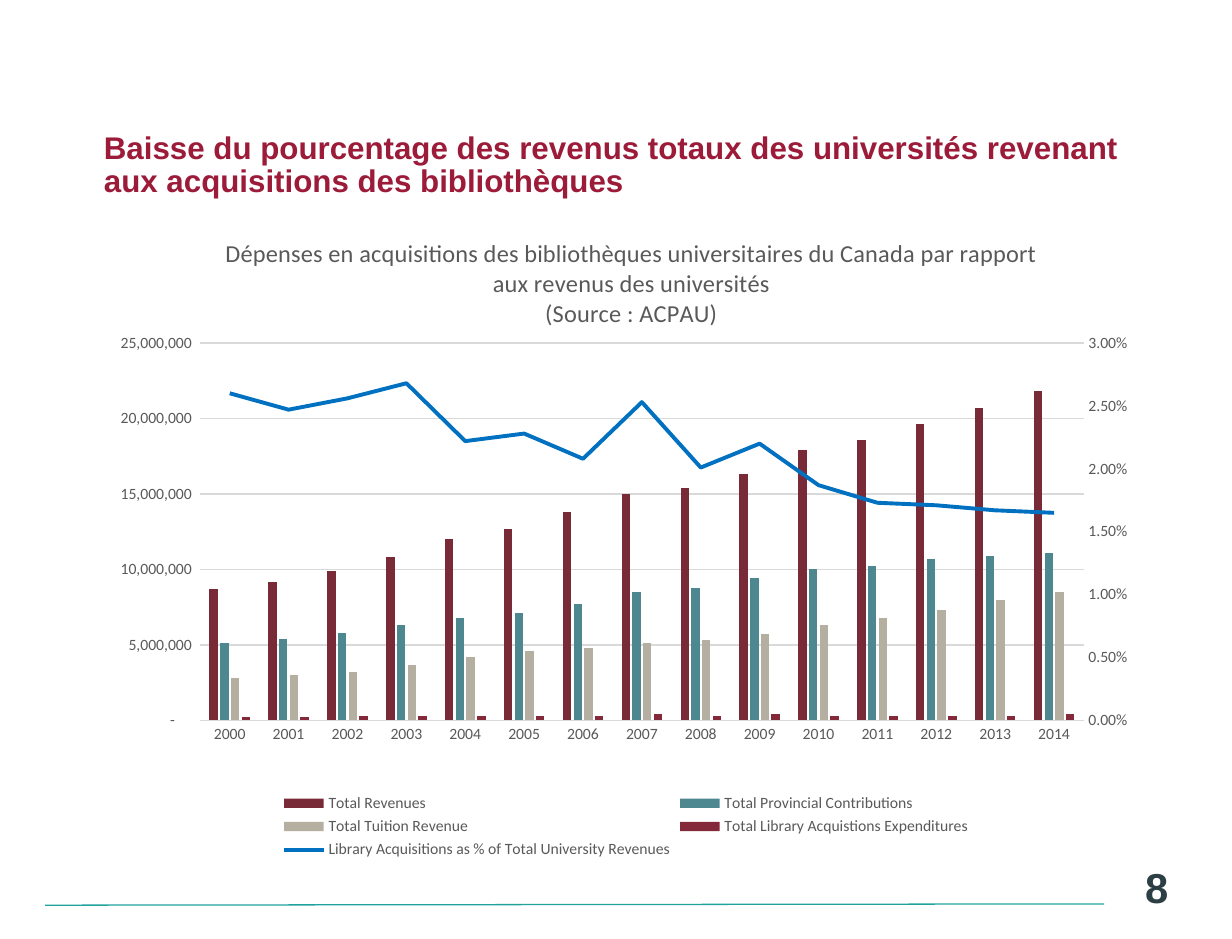
import copy
from dataclasses import dataclass

import pptx
import pptx.chart.axis
import pptx.chart.data
import pptx.dml.color
import pptx.enum.chart
import pptx.enum.shapes
import pptx.enum.text
import pptx.oxml
import pptx.oxml.ns
import pptx.util

Inches = pptx.util.Inches
qn = pptx.oxml.ns.qn
ALIGN = pptx.enum.text.PP_ALIGN
TICK_NONE = pptx.enum.chart.XL_TICK_MARK.NONE
CHART_NAMESPACE = 'xmlns:c="http://schemas.openxmlformats.org/drawingml/2006/chart"'


@dataclass(frozen=True)
class Theme:
    heading_font: str = "Arial"
    chart_font: str = "Calibri"
    heading: str = "9C1B39"
    number: str = "2C3F45"
    footer_line: str = "21A29D"
    chart_text: str = "595959"
    grid: str = "D9D9D9"
    columns: tuple = ("782A37", "4D878F", "B5AFA2", "842939")
    share: str = "0070C0"
    heading_size: float = 18
    number_size: float = 24
    chart_title_size: float = 14
    label_size: float = 9
    thin: float = 0.75
    thick: float = 2.25


THEME = Theme()

YEARS = [str(year) for year in range(2000, 2015)]
# Amounts in hundreds of thousands
AMOUNTS = {
    "Total Revenues":
        [87, 92, 99, 108, 120, 127, 138, 150, 154, 163, 179, 186, 196, 207, 218],
    "Total Provincial Contributions":
        [51, 54, 58, 63, 68, 71, 77, 85, 88, 94, 100, 102, 107, 109, 111],
    "Total Tuition Revenue":
        [28, 30, 32, 37, 42, 46, 48, 51, 53, 57, 63, 68, 73, 80, 85],
    "Total Library Acquistions Expenditures":
        [2, 2, 3, 3, 3, 3, 3, 4, 3, 4, 3, 3, 3, 3, 4],
}
SHARE_NAME = "Library Acquisitions as % of Total University Revenues"
SHARES = [0.026, 0.0247, 0.0256, 0.0268, 0.0222, 0.0228, 0.0208, 0.0253,
          0.0201, 0.022, 0.0187, 0.0173, 0.0171, 0.0167, 0.0165]
CHART_TITLE = [
    "Dépenses en acquisitions des bibliothèques universitaires du Canada "
    "par rapport aux revenus des universités",
    "(Source : ACPAU)",
]


def set_values(target, values):
    for name, value in values.items():
        setattr(target, name, value)


def rgb(color):
    return pptx.dml.color.RGBColor.from_string(color)


def style_font(font, name, size, color, bold=False):
    set_values(font, {"name": name, "size": pptx.util.Pt(size), "bold": bold})
    font.color.rgb = rgb(color)


def style_line(line, color, width):
    line.color.rgb = rgb(color)
    line.width = pptx.util.Pt(width)


def place(shape, left, top, width, height):
    set_values(shape, {"left": Inches(left), "top": Inches(top),
                       "width": Inches(width), "height": Inches(height)})


def write_text(shape, text, size, color, alignment):
    frame = shape.text_frame
    set_values(frame, {"text": text, "word_wrap": True,
                       "auto_size": pptx.enum.text.MSO_AUTO_SIZE.NONE,
                       "vertical_anchor": pptx.enum.text.MSO_ANCHOR.MIDDLE})
    paragraph = frame.paragraphs[0]
    paragraph.alignment = alignment
    style_font(paragraph.runs[0].font, THEME.heading_font, size, color, True)
    return paragraph


def add_footer(slide):
    line = slide.shapes.add_connector(
        pptx.enum.shapes.MSO_CONNECTOR.STRAIGHT,
        Inches(8.82), Inches(7.22), Inches(0.36), Inches(7.23))
    style_line(line.line, THEME.footer_line, THEME.thin)
    properties = line._element.spPr
    properties.append(properties.makeelement(qn("a:effectLst"), {}))
    number = slide.shapes.add_textbox(*map(Inches, (6.95, 6.67, 2.48, 0.83)))
    write_text(number, "8", THEME.number_size, THEME.number, ALIGN.RIGHT)


def set_layout(parent, index, **settings):
    """Fix the position of a chart part as fractions of the chart."""
    for old in parent.findall(qn("c:layout")):
        parent.remove(old)
    items = "".join(f'<c:{tag} val="{value}"/>' for tag, value in settings.items())
    parent.insert(index, pptx.oxml.parse_xml(
        f"<c:layout {CHART_NAMESPACE}><c:manualLayout>{items}"
        "</c:manualLayout></c:layout>"))


def style_value_axis(axis, maximum, step, number_format):
    set_values(axis, {"minimum_scale": 0, "maximum_scale": maximum,
                      "major_unit": step, "major_tick_mark": TICK_NONE,
                      "minor_tick_mark": TICK_NONE})
    set_values(axis.tick_labels, {"number_format": number_format,
                                  "number_format_is_linked": False})
    style_font(axis.tick_labels.font, THEME.chart_font, THEME.label_size,
               THEME.chart_text)
    axis.format.line.fill.background()


def move_share_to_line(chart):
    """Turn the last series into a line on a second, right-hand axis."""
    plot_area = chart._chartSpace.chart.plotArea
    bars = plot_area.find(qn("c:barChart"))
    share = bars.findall(qn("c:ser"))[-1]
    for bar_only in share.findall(qn("c:invertIfNegative")):
        share.remove(bar_only)
    lines = pptx.oxml.parse_xml(
        f'<c:lineChart {CHART_NAMESPACE}><c:grouping val="standard"/>'
        '<c:varyColors val="0"/><c:marker val="1"/>'
        '<c:axId val="5001"/><c:axId val="5002"/></c:lineChart>')
    lines.insert(2, share)
    bars.addnext(lines)

    category = copy.deepcopy(plot_area.find(qn("c:catAx")))
    value = copy.deepcopy(plot_area.find(qn("c:valAx")))
    plot_area.find(qn("c:valAx")).addnext(category)
    category.addnext(value)
    changes = [
        (category, {"axId": "5001", "crossAx": "5002", "delete": "1"}),
        (value, {"axId": "5002", "crossAx": "5001", "axPos": "r", "crosses": "max"}),
    ]
    for axis, settings in changes:
        for tag, setting in settings.items():
            axis.find(qn(f"c:{tag}")).set("val", setting)
    right_axis = pptx.chart.axis.ValueAxis(value)
    right_axis.has_major_gridlines = False
    style_value_axis(right_axis, 0.03, 0.005, "0.00%")


def add_chart_title(chart):
    frame = chart.chart_title.text_frame
    frame.text = "\n".join(CHART_TITLE)
    for paragraph in frame.paragraphs:
        style_font(paragraph.runs[0].font, THEME.chart_font,
                   THEME.chart_title_size, THEME.chart_text)
    set_layout(chart.chart_title._element, 1,
               xMode="edge", yMode="edge", x=0.12, y=0.03)


def add_revenue_chart(slide):
    data = pptx.chart.data.CategoryChartData()
    data.categories = YEARS
    for name, amounts in AMOUNTS.items():
        data.add_series(name, [amount * 100000 for amount in amounts], "#,##0")
    data.add_series(SHARE_NAME, SHARES, "0.00%")
    chart = slide.shapes.add_chart(
        pptx.enum.chart.XL_CHART_TYPE.COLUMN_CLUSTERED,
        *map(Inches, (0.75, 1.7, 8.5, 5.2)), data).chart
    style_font(chart.font, THEME.chart_font, THEME.label_size, THEME.chart_text)

    # Axes
    chart.category_axis.major_tick_mark = TICK_NONE
    style_line(chart.category_axis.format.line, THEME.grid, THEME.thin)
    style_value_axis(chart.value_axis, 25000000, 5000000,
                     r'_-* #,##0_-;\-* #,##0_-;_-* "-"??_-;_-@_-')
    style_line(chart.value_axis.major_gridlines.format.line, THEME.grid, THEME.thin)
    move_share_to_line(chart)

    # Series
    columns, lines = chart.plots
    set_values(columns, {"gap_width": 219, "overlap": -27,
                         "vary_by_categories": False})
    for series, color in zip(columns.series, THEME.columns):
        series.format.fill.solid()
        series.format.fill.fore_color.rgb = rgb(color)
    share = lines.series[0]
    share.smooth = False
    share.marker.style = pptx.enum.chart.XL_MARKER_STYLE.NONE
    style_line(share.format.line, THEME.share, THEME.thick)

    # Title, plot area and legend
    add_chart_title(chart)
    set_layout(chart._chartSpace.chart.plotArea, 0, layoutTarget="inner",
               xMode="edge", yMode="edge", x=0.1, y=0.2, w=0.83, h=0.58)
    chart.has_legend = True
    set_values(chart.legend, {"include_in_layout": False,
                              "position": pptx.enum.chart.XL_LEGEND_POSITION.BOTTOM})
    style_font(chart.legend.font, THEME.chart_font, THEME.label_size,
               THEME.chart_text)


def main():
    presentation = pptx.Presentation()
    set_values(presentation, {"slide_width": Inches(9.84),
                              "slide_height": Inches(7.5)})
    slide = presentation.slides.add_slide(presentation.slide_layouts[5])
    add_footer(slide)
    title = slide.shapes.title
    place(title, 0.73, 0.91, 8.45, 0.83)
    paragraph = write_text(
        title, "Baisse du pourcentage des revenus totaux des universités "
        "revenant aux acquisitions des bibliothèques",
        THEME.heading_size, THEME.heading, ALIGN.LEFT)
    paragraph.line_spacing = 0.9
    add_revenue_chart(slide)
    presentation.save("out.pptx")


if __name__ == "__main__":
    main()
